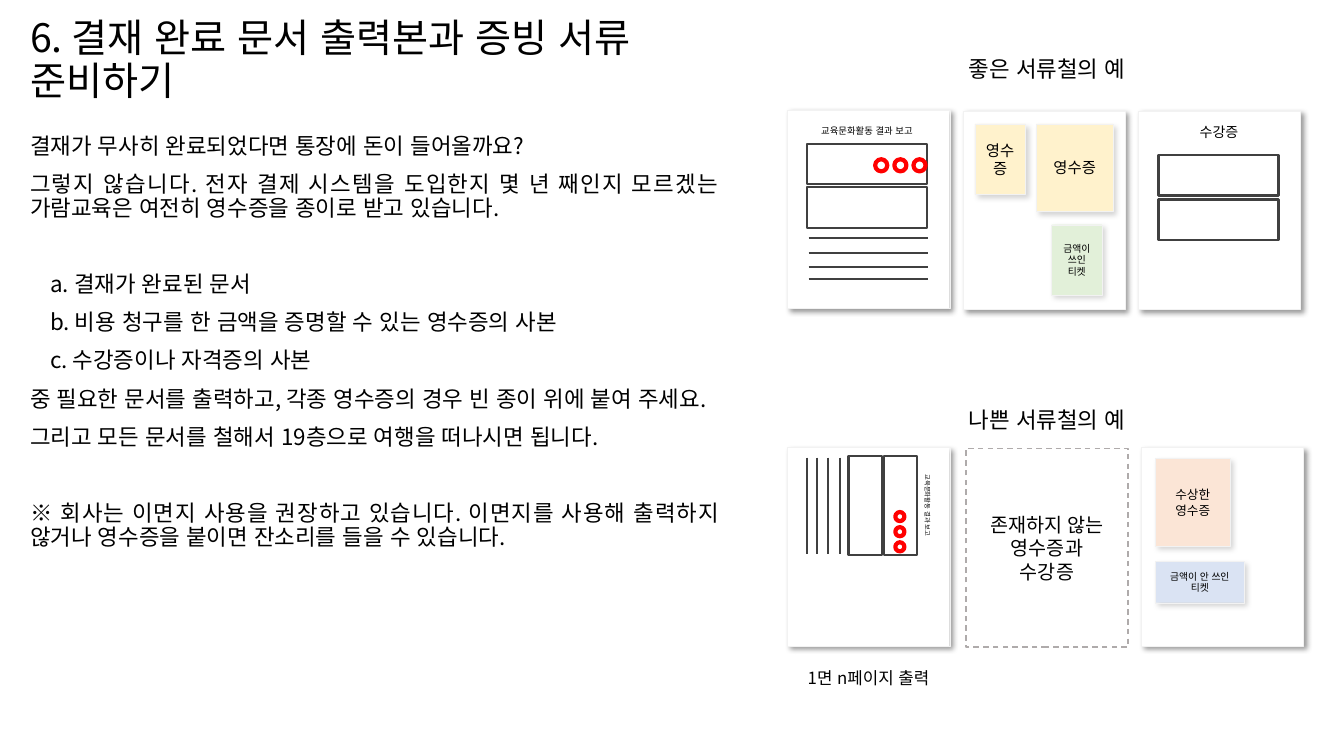
from lxml.etree import SubElement as Sub
from pptx import Presentation
from pptx.dml.color import RGBColor
from pptx.enum.dml import MSO_LINE
from pptx.enum.lang import MSO_LANGUAGE_ID as Lang
from pptx.enum.shapes import MSO_CONNECTOR as Conn, MSO_SHAPE as Geo
from pptx.enum.text import MSO_ANCHOR as Anc, PP_ALIGN as Al
from pptx.oxml.ns import qn
from pptx.util import Inches, Pt

FONT = "Noto Sans CJK KR"
INK, EDGE, PALE, RED = "404040", "AFABAB", "F2F2F2", "FF0000"
CREAM, GREEN, PEACH, BLUE = "FFF2CC", "E2F0D9", "FBE5D6", "DAE3F3"
PAGE_W, PAGE_H = 1.61, 1.97
REPORT = "교육문화활동 결과 보고"


def color(code):
    """Turn a hex string into a colour."""
    return RGBColor.from_string(code)


def write(par, text, size, align=Al.CENTER):
    """Add one run of text to a paragraph."""
    par.alignment = align
    run = par.add_run()
    run.text = text
    font = run.font
    font.size = Pt(size)
    font.color.rgb = color("000000")
    font.name = FONT
    font.language_id = Lang.KOREAN
    Sub(run._r.get_or_add_rPr(), qn("a:ea"), typeface=FONT)


def label(slide, box, text, size, align=Al.CENTER, anchor=Anc.MIDDLE, turn=0):
    """Place a text box and return its first paragraph."""
    shape = slide.shapes.add_textbox(*map(Inches, box))
    shape.rotation = turn
    frame = shape.text_frame
    frame.word_wrap = True
    frame.vertical_anchor = anchor
    write(frame.paragraphs[0], text, size, align)
    return frame.paragraphs[0]


def block(slide, box, fill=None, line=INK, width=1.5, geo=Geo.RECTANGLE, turn=0):
    """Draw a flat shape."""
    shape = slide.shapes.add_shape(geo, *map(Inches, box))
    shape.shadow.inherit = False
    shape.rotation = turn
    if fill:
        shape.fill.solid()
        shape.fill.fore_color.rgb = color(fill)
    else:
        shape.fill.background()
    shape.line.color.rgb = color(line)
    shape.line.width = Pt(width)
    return shape


def paper(slide, box, fill="FFFFFF", alpha=40):
    """Draw a sheet that casts a soft shadow."""
    shape = block(slide, box, fill, PALE, 0.25)
    effects = shape._element.spPr.find(qn("a:effectLst"))
    cast = Sub(effects, qn("a:outerShdw"), blurRad=str(Pt(4)), dist=str(Pt(3)),
               dir="2700000", algn="tl", rotWithShape="0")
    tint = Sub(cast, qn("a:srgbClr"), val="000000")
    Sub(tint, qn("a:alpha"), val=str(alpha * 1000))
    return shape


def note(slide, box, fill, text, size):
    """Draw a coloured slip with a caption."""
    frame = paper(slide, box, fill, 16).text_frame
    frame.word_wrap = True
    frame.vertical_anchor = Anc.MIDDLE
    write(frame.paragraphs[0], text, size)


def rule(slide, start, end):
    """Draw a straight dark line."""
    line = slide.shapes.add_connector(Conn.STRAIGHT, *map(Inches, start + end))
    line.line.color.rgb = color(INK)
    line.line.width = Pt(1.5)
    Sub(line._element.spPr, qn("a:effectLst"))


def report(slide, x, y):
    """Draw the signed report page."""
    paper(slide, (x, y, PAGE_W, PAGE_H))
    for drop in (1.27, 1.42, 1.56, 1.68):
        rule(slide, (x + 0.21, y + drop), (x + 1.39, y + drop))
    for drop in (0.34, 0.77):
        block(slide, (x + 0.19, y + drop, 1.19, 0.4))
    for i in range(3):
        block(slide, (x + 0.87 + 0.19 * i, y + 0.49, 0.12, 0.12),
              line=RED, width=3, geo=Geo.OVAL)
    label(slide, (x + 0.19, y + 0.08, 1.2, 0.26), REPORT, 6.7)


def slips(slide, x, y):
    """Draw the page with receipts stuck on it."""
    paper(slide, (x, y, PAGE_W, PAGE_H))
    note(slide, (x + 0.88, y + 1.13, 0.5, 0.7), GREEN, "금액이 쓰인 티켓", 7)
    note(slide, (x + 0.12, y + 0.13, 0.5, 0.7), CREAM, "영수증", 11)
    note(slide, (x + 0.73, y + 0.13, 0.76, 0.87), CREAM, "영수증", 11)


def course(slide, x, y):
    """Draw the course certificate page."""
    paper(slide, (x, y, PAGE_W, PAGE_H))
    label(slide, (x + 0.2, y + 0.08, 1.2, 0.26), "수강증", 10)
    for drop in (0.44, 0.88):
        block(slide, (x + 0.2, y + drop, 1.19, 0.4))


def small(slide, x, y):
    """Draw the report shrunk and turned sideways."""
    paper(slide, (x, y, PAGE_W, PAGE_H))
    for shift in (0.19, 0.29, 0.4, 0.52):
        rule(slide, (x + shift, y + 0.1), (x + shift, y + 1.06))
    for shift in (0.63, 0.28):
        block(slide, (x + shift, y + 0.41, 0.98, 0.33), turn=90)
    for i in range(3):
        block(slide, (x + 1.07, y + 0.64 + 0.15 * i, 0.09, 0.09),
              line=RED, width=3, geo=Geo.OVAL)
    label(slide, (x + 0.9, y + 0.47, 0.98, 0.21), REPORT, 4.5, turn=90)
    label(slide, (x, y + 2.14, PAGE_W, 0.28), "1면 n페이지 출력", 12)


def absent(slide, x, y):
    """Draw the dashed outline of a missing page."""
    shape = block(slide, (x, y, PAGE_W, PAGE_H), line=EDGE, width=1)
    shape.line.dash_style = MSO_LINE.DASH
    frame = shape.text_frame
    frame.word_wrap = True
    frame.vertical_anchor = Anc.MIDDLE
    write(frame.paragraphs[0], "존재하지 않는 영수증과", 14)
    write(frame.add_paragraph(), "수강증", 14)


def doubt(slide, x, y):
    """Draw the page of dubious receipts."""
    paper(slide, (x, y, PAGE_W, PAGE_H))
    note(slide, (x + 0.14, y + 0.11, 0.74, 0.87), PEACH, "수상한 영수증", 9)
    note(slide, (x + 0.14, y + 1.13, 0.88, 0.41), BLUE, "금액이 안 쓰인 티켓", 7)


def guide(slide, x, y):
    """Write the title and the instructions."""
    head = label(slide, (x, y, 6.43, 1.05), "6. 결재 완료 문서 출력본과 증빙 서류 준비하기",
                 28, Al.LEFT, Anc.TOP)
    head.line_spacing = 0.9
    rows = (
        ("결재가 무사히 완료되었다면 통장에 돈이 들어올까요?", 0, 0),
        ("그렇지 않습니다. 전자 결제 시스템을 도입한지 몇 년 째인지 모르겠는 "
         "가람교육은 여전히 영수증을 종이로 받고 있습니다.", 10, 0),
        ("a. 결재가 완료된 문서", 37, 0.2),
        ("b. 비용 청구를 한 금액을 증명할 수 있는 영수증의 사본", 10, 0.2),
        ("c. 수강증이나 자격증의 사본", 10, 0.2),
        ("중 필요한 문서를 출력하고, 각종 영수증의 경우 빈 종이 위에 붙여 주세요.", 10, 0),
        ("그리고 모든 문서를 철해서 19층으로 여행을 떠나시면 됩니다.", 10, 0),
        ("※ 회사는 이면지 사용을 권장하고 있습니다. 이면지를 사용해 출력하지 "
         "않거나 영수증을 붙이면 잔소리를 들을 수 있습니다.", 37, 0),
    )
    body = slide.shapes.add_textbox(*map(Inches, (x, y + 1.15, 7.03, 6.08)))
    frame = body.text_frame
    frame.word_wrap = True
    for i, (text, gap, indent) in enumerate(rows):
        par = frame.add_paragraph() if i else frame.paragraphs[0]
        par._p.get_or_add_pPr().set("marL", str(Inches(indent)))
        par.line_spacing = 0.9
        par.space_before = Pt(gap)
        write(par, text, 16, Al.JUSTIFY)


def sample(slide, x, y, title, pages):
    """Draw a titled row of pages."""
    label(slide, (x + 1.39, y, 2.37, 0.37), title, 16, anchor=Anc.TOP)
    for draw, shift, drop in pages:
        draw(slide, x + shift, y + drop)


def main():
    """Build and save the slide."""
    deck = Presentation()
    deck.slide_width, deck.slide_height = Inches(13.33), Inches(7.5)
    slide = deck.slides.add_slide(deck.slide_layouts[6])
    guide(slide, 0.2, 0.14)
    sample(slide, 7.81, 0.5, "좋은 서류철의 예",
           ((course, 3.48, 0.6), (slips, 1.74, 0.6), (report, 0, 0.59)))
    sample(slide, 7.81, 3.98, "나쁜 서류철의 예",
           ((absent, 1.77, 0.47), (small, 0, 0.46), (doubt, 3.51, 0.46)))
    deck.save("out.pptx")


if __name__ == "__main__":
    main()
